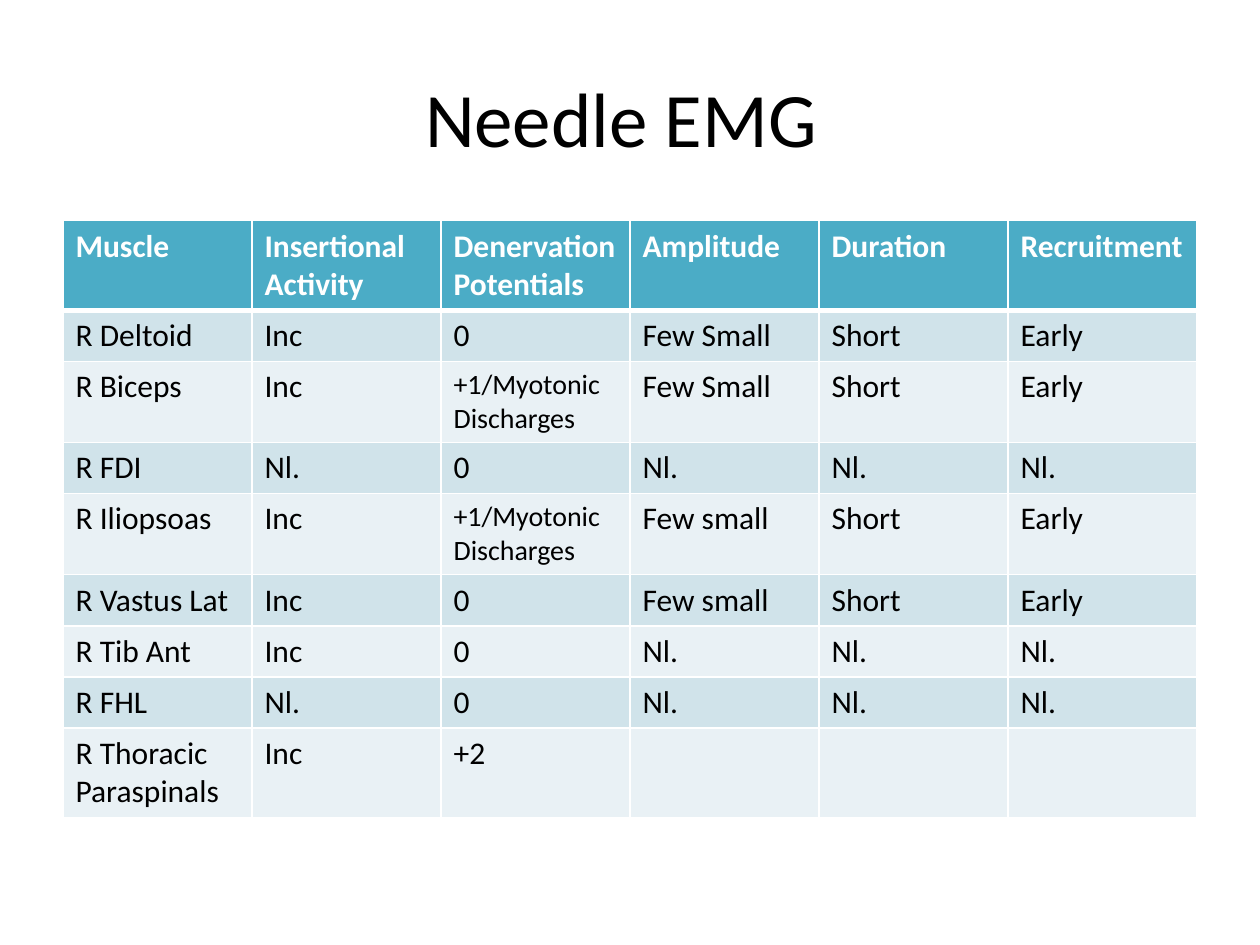
import pptx
import pptx.dml.color
import pptx.enum.text
import pptx.oxml
import pptx.oxml.ns
import pptx.util
from pptx.util import Cm

FONT = "Calibri"
WHITE, BLACK = "FFFFFF", "000000"
HEADER_FILL = "4BACC6"
BAND_FILLS = ("D0E3EA", "E9F1F5")
MYOTONIC = "+1/Myotonic Discharges"

FINDINGS = [
    ("Muscle", "Insertional Activity", "Denervation\nPotentials",
     "Amplitude", "Duration", "Recruitment"),
    ("R Deltoid", "Inc", "0", "Few Small", "Short", "Early"),
    ("R Biceps", "Inc", MYOTONIC, "Few Small", "Short", "Early"),
    ("R FDI", "Nl.", "0", "Nl.", "Nl.", "Nl."),
    ("R Iliopsoas", "Inc", MYOTONIC, "Few small", "Short", "Early"),
    ("R Vastus Lat", "Inc", "0", "Few small", "Short", "Early"),
    ("R Tib Ant", "Inc", "0", "Nl.", "Nl.", "Nl."),
    ("R FHL", "Nl.", "0", "Nl.", "Nl.", "Nl."),
    ("R Thoracic Paraspinals", "Inc", "+2", "", "", ""),
]


def rgb(color):
    return pptx.dml.color.RGBColor.from_string(color)


def format_text(frame, size, color, bold=False):
    for paragraph in frame.paragraphs:
        font = paragraph.font
        font.name = FONT
        font.size = pptx.util.Pt(size)
        font.bold = bold
        font.color.rgb = rgb(color)


def add_title(slide, text):
    title = slide.shapes.title
    title.left, title.top = Cm(1.27), Cm(0.76)
    title.width, title.height = Cm(22.86), Cm(3.18)
    frame = title.text_frame
    frame.text = text
    frame.vertical_anchor = pptx.enum.text.MSO_ANCHOR.MIDDLE
    frame.paragraphs[0].alignment = pptx.enum.text.PP_ALIGN.CENTER
    format_text(frame, 44, BLACK)


def set_borders(cell, **widths):
    """Draw white cell edges; the widths are in points, by side L, R, T, B."""
    properties = cell._tc.get_or_add_tcPr()
    for side, width in widths.items():
        properties.append(pptx.oxml.parse_xml(
            f'<a:ln{side} {pptx.oxml.ns.nsdecls("a")} w="{pptx.util.Pt(width)}">'
            f'<a:solidFill><a:srgbClr val="{WHITE}"/></a:solidFill></a:ln{side}>'))


def fill_cell(cell, text, row):
    header = row == 0
    cell.text = text
    size = 16 if text == MYOTONIC else 18
    format_text(cell.text_frame, size, WHITE if header else BLACK, header)
    # The rule under the header row is thicker than the others
    set_borders(cell, L=1, R=1, T=3 if row == 1 else 1, B=3 if header else 1)
    cell.fill.solid()
    cell.fill.fore_color.rgb = rgb(HEADER_FILL if header else BAND_FILLS[(row - 1) % 2])


def add_findings_table(slide):
    row_height = Cm(1.03)
    table = slide.shapes.add_table(
        len(FINDINGS), len(FINDINGS[0]), Cm(1.27), Cm(4.45),
        Cm(22.86), row_height * len(FINDINGS)).table
    for column in table.columns:
        column.width = Cm(3.81)
    for row, finding in enumerate(FINDINGS):
        table.rows[row].height = row_height
        for column, text in enumerate(finding):
            fill_cell(table.cell(row, column), text, row)


def main():
    deck = pptx.Presentation()
    deck.slide_width, deck.slide_height = Cm(25.4), Cm(19.05)
    slide = deck.slides.add_slide(deck.slide_layouts[5])  # Title only
    # The trailing space shifts the centred title slightly to the left
    add_title(slide, "Needle EMG ")
    add_findings_table(slide)
    deck.save("out.pptx")


if __name__ == "__main__":
    main()
